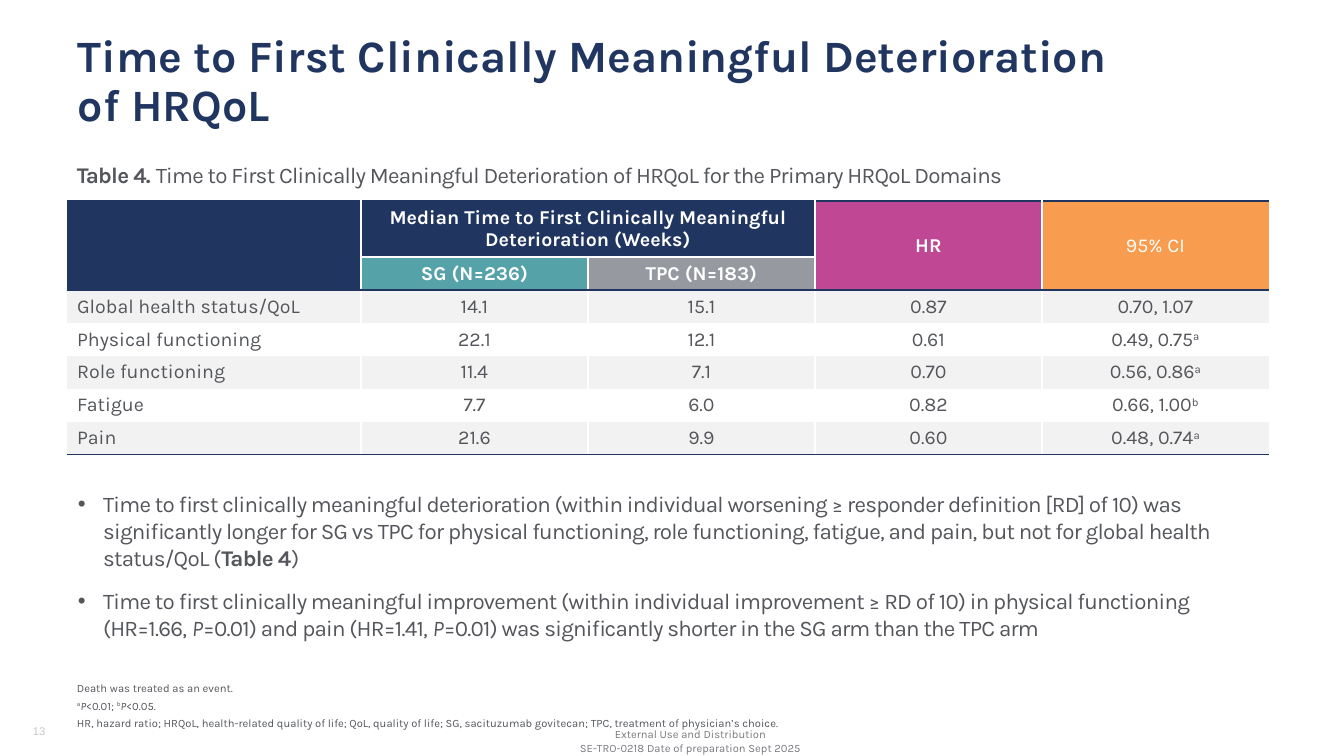
"""Build the slide on time to first clinically meaningful deterioration of HRQoL."""
from lxml import etree
from pptx import Presentation
from pptx import util as u
from pptx.dml.color import RGBColor
from pptx.enum import text
from pptx.oxml import ns

PX = 914400 / 100.8
NAVY = RGBColor(0x20, 0x36, 0x61)
TEAL = RGBColor(0x55, 0xA2, 0xA8)
GREY = RGBColor(0x96, 0x99, 0x9F)
PINK = RGBColor(0xC0, 0x47, 0x94)
ORANGE = RGBColor(0xF8, 0x9D, 0x50)
WHITE = RGBColor(0xFF, 0xFF, 0xFF)
BAND = RGBColor(0xF2, 0xF2, 0xF2)
INK = RGBColor(0x54, 0x56, 0x5B)
FOOTER = RGBColor(0x78, 0x7A, 0x7E)
PALE = RGBColor(0xC6, 0xCA, 0xC6)
TOP, MIDDLE, BOTTOM = text.MSO_ANCHOR.TOP, text.MSO_ANCHOR.MIDDLE, text.MSO_ANCHOR.BOTTOM
LEFT, CENTER = text.PP_ALIGN.LEFT, text.PP_ALIGN.CENTER


def write(p, parts, size, color, font="Karla", align=LEFT, spacing=0):
    """Add (text, style) runs; style letters are b bold, i italic, s superscript, n new line."""
    p.alignment = align
    for words, style in parts:
        if "n" in style:
            p.add_line_break()
        r = p.add_run()
        r.text = words
        r.font.name, r.font.size = font, u.Pt(size)
        r.font.bold, r.font.italic = "b" in style, "i" in style
        r.font.color.rgb = color
        if "s" in style:
            r.font._element.set("baseline", "30000")
        if spacing:
            r.font._element.set("spc", str(spacing))


def add_text(box, anchor, paragraphs, *look, after=0, **kw):
    """Add a wrapped text box and return its paragraphs."""
    tf = s.shapes.add_textbox(*[u.Emu(round(v * PX)) for v in box]).text_frame
    tf.word_wrap, tf.vertical_anchor = True, anchor
    for i, parts in enumerate(paragraphs):
        p = tf.add_paragraph() if i else tf.paragraphs[0]
        p.space_after = u.Pt(after)
        write(p, parts, *look, **kw)
    return tf.paragraphs


prs = Presentation()
prs.slide_width, prs.slide_height = u.Emu(round(1344 * PX)), u.Emu(round(756 * PX))
s = prs.slides.add_slide(prs.slide_layouts[6])

add_text((518, 725, 345, 32), MIDDLE,
         [[("External Use and Distribution", "")],
          [("SE-TRO-0218 Date of preparation Sept 2025", "")]],
         8, FOOTER, align=CENTER)
add_text((23, 711, 60, 32), BOTTOM, [[("13", "")]], 8, PALE, font="Arial")

title = add_text((68, 15, 1205, 121), BOTTOM,
                 [[("Time to First Clinically Meaningful Deterioration", "b"),
                   ("of HRQoL", "bn")]],
                 32, NAVY)
title[0].line_spacing = 0.9

add_text((67, 156, 1021, 37), TOP,
         [[("Table 4. ", "b"),
           ("Time to First Clinically Meaningful Deterioration of HRQoL "
            "for the Primary HRQoL Domains", "")]],
         16, INK, spacing=-50)

bullets = add_text(
    (68, 485, 1200, 211), TOP,
    [[("Time to first clinically meaningful deterioration (within individual worsening "
       "≥ responder definition [RD] of 10) was significantly longer for SG vs TPC for "
       "physical functioning, role functioning, fatigue, and pain, but not for global "
       "health status/QoL (", ""), ("Table 4", "b"), (")", "")],
     [("Time to first clinically meaningful improvement (within individual improvement "
       "≥ RD of 10) in physical functioning (HR=1.66, ", ""), ("P", "i"),
      ("=0.01) and pain (HR=1.41, ", ""), ("P", "i"),
      ("=0.01) was significantly shorter in the SG arm than the TPC arm", "")]],
    16, INK, after=12, spacing=-50)
for p in bullets:
    pPr = p._p.get_or_add_pPr()
    pPr.set("marL", str(u.Inches(0.25)))
    pPr.set("indent", str(-u.Inches(0.25)))
    etree.SubElement(pPr, ns.qn("a:buFont")).set("typeface", "Arial")
    etree.SubElement(pPr, ns.qn("a:buChar")).set("char", "•")

add_text((67, 646, 1067, 89), BOTTOM,
         [[("Death was treated as an event.", "")],
          [("a", "s"), ("P", "i"), ("<0.01; ", ""), ("b", "s"), ("P", "i"), ("<0.05.", "")],
          [("HR, hazard ratio; HRQoL, health-related quality of life; QoL, quality of life; "
            "SG, sacituzumab govitecan; TPC, treatment of physician’s choice.", "")]],
         8, INK, after=3)

rows = [
    ["", "Median Time to First Clinically Meaningful Deterioration (Weeks)", "", "HR", "95% CI"],
    ["", "SG (N=236)", "TPC (N=183)", "", ""],
    ["Global health status/QoL", "14.1", "15.1", "0.87", "0.70, 1.07"],
    ["Physical functioning", "22.1", "12.1", "0.61", "0.49, 0.75"],
    ["Role functioning", "11.4", "7.1", "0.70", "0.56, 0.86"],
    ["Fatigue", "7.7", "6.0", "0.82", "0.66, 1.00"],
    ["Pain", "21.6", "9.9", "0.60", "0.48, 0.74"],
]
notes = {3: "a", 4: "a", 5: "b", 6: "a"}
header_fills = [[NAVY, NAVY, NAVY, PINK, ORANGE], [NAVY, TEAL, GREY, PINK, ORANGE]]
row_edges = {0: NAVY, 1: WHITE, 2: NAVY, 7: NAVY}
col_widths = [294] + [227] * 4
row_heights = [56] + [33] * 6

frame = s.shapes.add_table(7, 5, *[u.Emu(round(v * PX)) for v in
                                   (67, 201, sum(col_widths), sum(row_heights))])
table = frame.table
table.first_row = table.horz_banding = False
for col, width in zip(table.columns, col_widths):
    col.width = u.Emu(round(width * PX))
for row, height in zip(table.rows, row_heights):
    row.height = u.Emu(round(height * PX))
for first, last in [((0, 0), (1, 0)), ((0, 1), (0, 2)), ((0, 3), (1, 3)), ((0, 4), (1, 4))]:
    table.cell(*first).merge(table.cell(*last))

for i, values in enumerate(rows):
    for j, value in enumerate(values):
        cell = table.cell(i, j)
        header = i < 2
        if value:
            parts = [(value, "b" if header and j < 4 else "")]
            if j == 4 and i in notes:
                parts.append((notes[i], "s"))
            write(cell.text_frame.paragraphs[0], parts, 14, WHITE if header else INK,
                  align=CENTER if j else LEFT)
        cell.vertical_anchor = MIDDLE
        cell.margin_top = cell.margin_bottom = u.Emu(round(4 * PX)) if value else 0
        below = i + (cell.span_height if cell.is_merge_origin else 1)
        edges = {"L": WHITE if j else None, "R": WHITE if j < 4 else None,
                 "T": row_edges.get(i), "B": row_edges.get(below)}
        for side, color in edges.items():
            ln = etree.SubElement(cell._tc.get_or_add_tcPr(), ns.qn(f"a:ln{side}"))
            ln.set("w", str(u.Pt(1)))
            if color is None:
                etree.SubElement(ln, ns.qn("a:noFill"))
            else:
                fill = etree.SubElement(ln, ns.qn("a:solidFill"))
                etree.SubElement(fill, ns.qn("a:srgbClr")).set("val", str(color))
        if header or i % 2 == 0:
            cell.fill.solid()
            cell.fill.fore_color.rgb = header_fills[i][j] if header else BAND
        else:
            cell.fill.background()

prs.save("out.pptx")
